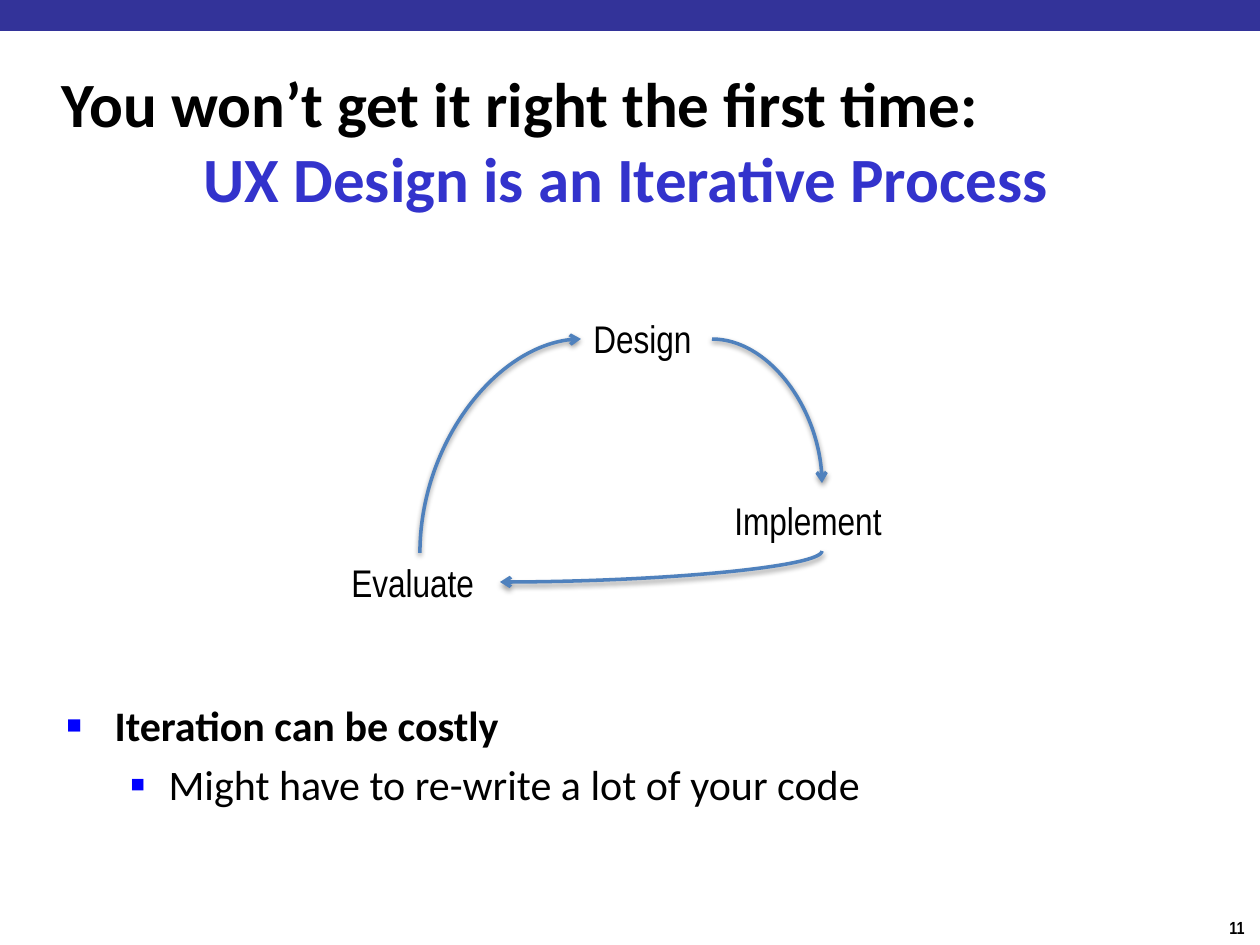
import pptx
import pptx.dml.color
import pptx.enum.shapes
import pptx.enum.text
import pptx.oxml
import pptx.oxml.ns
import pptx.util

RGBColor = pptx.dml.color.RGBColor
Pt = pptx.util.Pt
BLACK = RGBColor(0x00, 0x00, 0x00)
BAND_BLUE = RGBColor(0x33, 0x33, 0x99)
TITLE_BLUE = RGBColor(0x33, 0x33, 0xCC)
BULLET_BLUE = RGBColor(0x00, 0x00, 0xFF)
ARROW_BLUE = RGBColor(0x4F, 0x81, 0xBD)

PAGE_WIDTH, PAGE_HEIGHT = 1260, 945
EMU_PER_PX = 914400 / 126

BAND = (0, 0, PAGE_WIDTH, 31)
TITLE_BOX = (49, 60, 1158, 160)
BODY_BOX = (54, 693, 1089, 180)

TITLE_SPANS = [
    ("You won’t get it right the first time:", BLACK),
    ("\t\tUX Design is an Iterative Process", TITLE_BLUE),
]
TITLE_INDENT = 16
# text, level, bold, left margin, hanging indent, space before, bullet, bullet size %
BULLETS = [
    ("Iteration can be costly", 0, True, 48, 48, 0, "■", 60),
    ("Might have to re-write a lot of your code", 1, False, 102, 39, 4.8, "▪", 110),
]
# text, box, size, bold
LABELS = [
    ("Design", (581, 309, 131, 59), 22, False),
    ("Implement", (722, 491, 199, 59), 22, False),
    ("Evaluate", (339, 553, 161, 59), 22, False),
    ("11", (1217, 911, 43, 34), 10, True),
]
# start, end, whether the curve leaves its start vertically
ARROWS = [
    ((712, 339), (822, 483), False),
    ((822, 551), (500, 582), True),
    ((420, 553), (581, 339), True),
]
ARROW_EFFECTS = (
    '<a:effectLst %s><a:outerShdw blurRad="40000" dist="20000" dir="5400000" rotWithShape="0">'
    '<a:srgbClr val="000000"><a:alpha val="38000"/></a:srgbClr></a:outerShdw></a:effectLst>'
)


def px(length):
    return pptx.util.Emu(round(length * EMU_PER_PX))


def place(shape, box):
    for name, length in zip(("left", "top", "width", "height"), box):
        setattr(shape, name, px(length))


def style(font, color, **values):
    font.color.rgb = color
    for name, value in values.items():
        setattr(font, name, value)


def xml(template):
    return pptx.oxml.parse_xml(template % pptx.oxml.ns.nsdecls("a"))


def indent(para, margin, hanging):
    properties = para._p.get_or_add_pPr()
    properties.set("marL", str(px(margin)))
    properties.set("indent", str(-px(hanging)))
    return properties


def prepare(shape, anchor):
    frame = shape.text_frame
    frame.word_wrap = True
    frame.auto_size = pptx.enum.text.MSO_AUTO_SIZE.NONE
    frame.vertical_anchor = anchor
    return frame


def add_title(page):
    title = page.shapes.title
    place(title, TITLE_BOX)
    para = prepare(title, pptx.enum.text.MSO_ANCHOR.MIDDLE).paragraphs[0]
    para.alignment = pptx.enum.text.PP_ALIGN.LEFT
    indent(para, TITLE_INDENT, TITLE_INDENT)
    for index, (text, color) in enumerate(TITLE_SPANS):
        if index:
            para.add_line_break()
        span = para.add_run()
        span.text = text
        style(span.font, color, name="Calibri", size=Pt(36), bold=True)


def add_body(page):
    body = page.placeholders[1]
    place(body, BODY_BOX)
    frame = prepare(body, pptx.enum.text.MSO_ANCHOR.TOP)
    for index, (text, level, bold, margin, hanging, before, mark, percent) in enumerate(BULLETS):
        para = frame.add_paragraph() if index else frame.paragraphs[0]
        para.level = level
        properties = indent(para, margin, hanging)
        for element in (
            f'<a:buClr %s><a:srgbClr val="{BULLET_BLUE}"/></a:buClr>',
            f'<a:buSzPct %s val="{percent * 1000}"/>',
            '<a:buFont %s typeface="Arial"/>',
            f'<a:buChar %s char="{mark}"/>',
        ):
            properties.append(xml(element))
        para.space_before = Pt(before)
        span = para.add_run()
        span.text = text
        style(span.font, BLACK, name="Calibri", size=Pt(24), bold=bold)


def add_label(page, text, box, size, bold):
    label = page.shapes.add_textbox(*map(px, box))
    frame = prepare(label, pptx.enum.text.MSO_ANCHOR.TOP)
    span = frame.paragraphs[0].add_run()
    span.text = text
    style(span.font, BLACK, name="Arial Narrow", size=Pt(size), bold=bold)


def quarter_turn_back(point, center):
    """Position of a point before a clockwise quarter turn about the center."""
    across, down = point[0] - center[0], point[1] - center[1]
    return center[0] + down, center[1] - across


def add_arrow(page, start, end, vertical_start):
    if vertical_start:
        center = [(a + b) / 2 for a, b in zip(start, end)]
        start, end = (quarter_turn_back(point, center) for point in (start, end))
    arrow = page.shapes.add_connector(
        pptx.enum.shapes.MSO_CONNECTOR.CURVE, *map(px, (*start, *end)))
    properties = arrow._element.spPr
    properties.prstGeom.set("prst", "curvedConnector2")
    if vertical_start:
        properties.xfrm.set("rot", str(90 * 60000))
    arrow.line.color.rgb = ARROW_BLUE
    arrow.line.width = Pt(2)
    arrow.line._get_or_add_ln().append(xml('<a:tailEnd %s type="arrow"/>'))
    properties.append(xml(ARROW_EFFECTS))


def main():
    deck = pptx.Presentation()
    deck.slide_width, deck.slide_height = px(PAGE_WIDTH), px(PAGE_HEIGHT)
    page = deck.slides.add_slide(deck.slide_layouts[1])

    band = page.shapes.add_shape(
        pptx.enum.shapes.MSO_SHAPE.RECTANGLE, *map(px, BAND))
    band.shadow.inherit = False
    band.fill.solid()
    band.fill.fore_color.rgb = BAND_BLUE
    band.line.fill.background()

    add_title(page)
    add_body(page)
    for label in LABELS:
        add_label(page, *label)
    for arrow in ARROWS:
        add_arrow(page, *arrow)
    deck.save("out.pptx")


if __name__ == "__main__":
    main()
